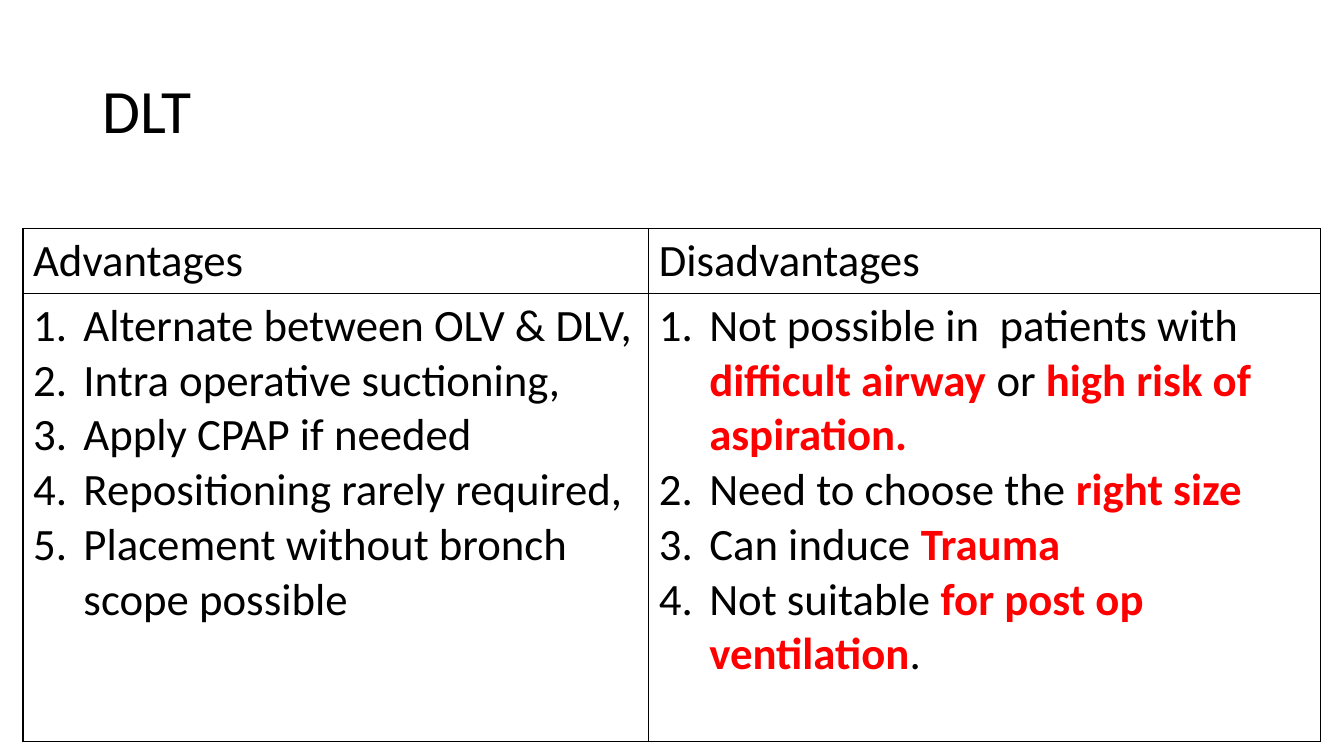
from pptx import Presentation
from pptx.dml.color import RGBColor
from pptx.enum.text import MSO_ANCHOR as Anchor
from pptx.oxml import parse_xml
from pptx.oxml.ns import nsdecls
from pptx.util import Cm, Pt

BLACK = RGBColor(0x00, 0x00, 0x00)
RED = RGBColor(0xFF, 0x00, 0x00)

ADVANTAGES = [
    ["Alternate between OLV & DLV,"],
    ["Intra operative suctioning,"],
    ["Apply CPAP if needed"],
    ["Repositioning rarely required,"],
    ["Placement without bronch scope possible"],
]
DISADVANTAGES = [
    ["Not possible in  patients with ", "difficult airway ", "or ", "high risk of aspiration."],
    ["Need to choose the ", "right size"],
    ["Can induce ", "Trauma"],
    ["Not suitable ", "for post op ventilation", "."],
]


def add_run(paragraph, text, *, font, size, color=BLACK, bold=False):
    run = paragraph.add_run()
    run.text = text
    run.font.name = font
    run.font.size = Pt(size)
    run.font.color.rgb = color
    run.font.bold = bold


class SlideBuilder:
    font = "Calibri"
    title_size = 44
    table_size = 32

    def __init__(self, slide):
        self.slide = slide

    def title(self, text, left, top, width, height):
        frame = self.slide.shapes.add_textbox(left, top, width, height).text_frame
        frame.word_wrap = True
        frame.vertical_anchor = Anchor.MIDDLE
        paragraph = frame.paragraphs[0]
        paragraph.line_spacing = 0.9
        add_run(paragraph, text, font=self.font, size=self.title_size)

    def table(self, rows, left, top, widths, heights):
        table = self.slide.shapes.add_table(
            len(rows), len(widths), left, top, sum(widths), sum(heights)).table
        table.first_row = table.horz_banding = False
        for column, width in zip(table.columns, widths):
            column.width = width
        for row, height, contents in zip(table.rows, heights, rows):
            row.height = height
            for cell, entries in zip(row.cells, contents):
                self.outline(cell)
                self.fill_cell(cell, entries)

    def outline(self, cell):
        properties = cell._tc.get_or_add_tcPr()
        for side in "LRTB":
            properties.append(parse_xml(
                f'<a:ln{side} {nsdecls("a")} w="{Pt(1)}"><a:solidFill>'
                f'<a:srgbClr val="{BLACK}"/></a:solidFill></a:ln{side}>'))
        cell.fill.background()

    def fill_cell(self, cell, entries):
        if isinstance(entries, str):
            add_run(cell.text_frame.paragraphs[0], entries,
                    font=self.font, size=self.table_size)
            return
        for number, parts in enumerate(entries):
            frame = cell.text_frame
            paragraph = frame.add_paragraph() if number else frame.paragraphs[0]
            self.number(paragraph)
            for index, part in enumerate(parts):
                emphasis = index % 2 == 1
                add_run(paragraph, part, font=self.font, size=self.table_size,
                        color=RED if emphasis else BLACK, bold=emphasis)

    def number(self, paragraph):
        properties = paragraph._p.get_or_add_pPr()
        properties.set("marL", str(Cm(1.27)))
        properties.set("indent", str(-Cm(1.27)))
        properties.append(parse_xml(
            f'<a:buFont {nsdecls("a")} typeface="+mj-lt"/>'))
        properties.append(parse_xml(
            f'<a:buAutoNum {nsdecls("a")} type="arabicPeriod"/>'))


def main():
    presentation = Presentation()
    presentation.slide_width = Cm(33.87)
    presentation.slide_height = Cm(19.05)
    slide = presentation.slides.add_slide(presentation.slide_layouts[6])
    builder = SlideBuilder(slide)
    builder.table(
        [["Advantages", "Disadvantages"], [ADVANTAGES, DISADVANTAGES]],
        Cm(0.58), Cm(5.76), [Cm(15.77), Cm(16.92)], [Cm(1.64), Cm(11.29)])
    builder.title("DLT", Cm(2.33), Cm(1.01), Cm(29.21), Cm(3.68))
    presentation.save("out.pptx")


if __name__ == "__main__":
    main()
